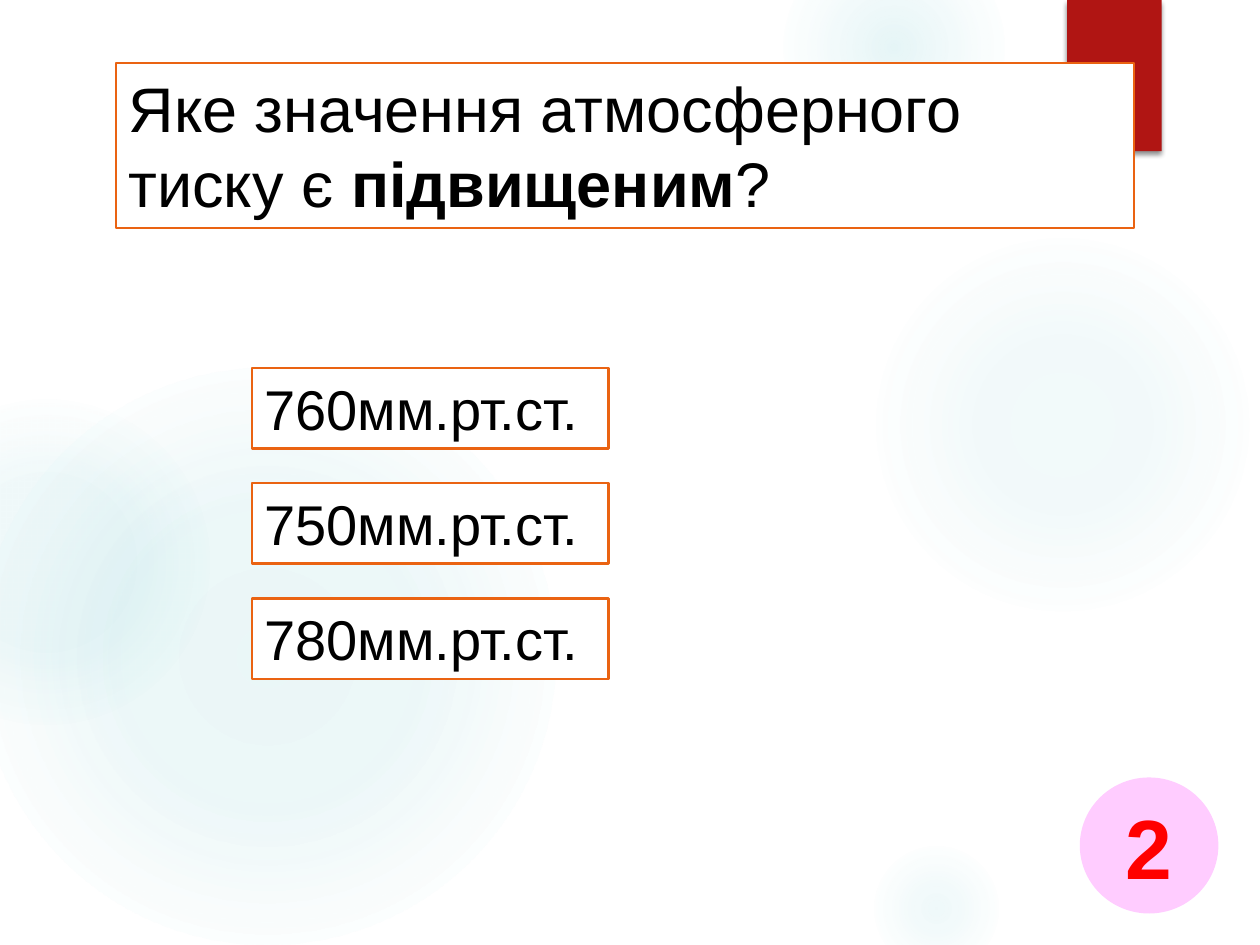
from lxml import etree
from pptx import Presentation
from pptx import util as u
from pptx.dml.color import RGBColor
from pptx.enum import shapes, text
from pptx.oxml import parse_xml
from pptx.oxml.ns import nsdecls

# Content
ASK = [("Яке значення атмосферного тиску є ", False),
       ("підвищеним", True), ("?", False)]
ANSWERS = ["760мм.рт.ст.", "750мм.рт.ст.", "780мм.рт.ст."]
NUMBER = "2"

# Glows: left, top, diameter, (position %, opacity %) stops
GLOWS = [
    (6.89, 1.83, 3.08, [(0, 7), (36, 6), (69, 0), (100, 0)]),
    (6.22, -0.5, 1.75, [(0, 14), (36, 7), (73, 0), (100, 0)]),
    (6.89, 6.67, 1.08, [(0, 9), (36, 5), (66, 0), (100, 0)]),
    (-0.17, 2.92, 4.58, [(0, 11), (36, 10), (75, 0), (100, 0)]),
    (-0.92, 3.17, 2.58, [(0, 8), (36, 8), (72, 0), (100, 0)]),
]
TEAL, RED, ORANGE, PINK = "4CB9C3", "B01513", "EA6312", "FFCCFF"
LEFT, TOP, STEP = 2, 2.92, 0.915  # answer column
RECT, OVAL = shapes.MSO_SHAPE.RECTANGLE, shapes.MSO_SHAPE.OVAL
ALIGN, ANCHOR = text.PP_ALIGN, text.MSO_ANCHOR


def rgb(code):
    return RGBColor.from_string(code)


def paint(shape, fill, line=None):
    shape.fill.solid()
    shape.fill.fore_color.rgb = rgb(fill)
    if line:
        shape.line.color.rgb = rgb(line)
        shape.line.width = u.Pt(1.5)
    else:
        shape.line.fill.background()


def add(kind, box, fill, line=None):
    shape = slide.shapes.add_shape(kind, *map(u.Inches, box))
    shape.shadow.inherit = False
    paint(shape, fill, line)
    return shape


def write(shape, runs, size, color="000000", align=ALIGN.LEFT,
          anchor=ANCHOR.TOP, fit=text.MSO_AUTO_SIZE.NONE):
    frame = shape.text_frame
    form = {"word_wrap": True, "auto_size": fit, "vertical_anchor": anchor,
            "margin_left": u.Inches(0.1), "margin_right": u.Inches(0.1),
            "margin_top": u.Inches(0.05), "margin_bottom": u.Inches(0.05)}
    for key, val in form.items():
        setattr(frame, key, val)
    para = frame.paragraphs[0]
    para.alignment = align
    for words, bold in runs:
        run = para.add_run()
        run.text = words
        for key, val in {"name": "Arial", "size": u.Pt(size), "bold": bold}.items():
            setattr(run.font, key, val)
        run.font.color.rgb = rgb(color)


def glow(shape, stops):
    marks = "".join(
        f'<a:gs pos="{pos * 1000}"><a:srgbClr val="{TEAL}">'
        f'<a:alpha val="{alpha * 1000}"/></a:srgbClr></a:gs>'
        for pos, alpha in stops)
    grad = parse_xml(
        f'<a:gradFill {nsdecls("a")} rotWithShape="1"><a:gsLst>{marks}</a:gsLst>'
        '<a:path path="circle"><a:fillToRect l="50000" t="50000" r="50000" '
        'b="50000"/></a:path></a:gradFill>')
    props = shape.fill._xPr
    props.replace(props.solidFill, grad)


def shade(shape):
    effects = shape._element.spPr.find("{*}effectLst")
    effects.append(etree.fromstring(
        f'<a:outerShdw {nsdecls("a")} blurRad="{u.Pt(3)}" dist="{u.Pt(2)}" '
        'dir="5400000" rotWithShape="0"><a:srgbClr val="000000">'
        '<a:alpha val="45000"/></a:srgbClr></a:outerShdw>'))


prs = Presentation()
prs.slide_width, prs.slide_height = u.Inches(10), u.Inches(7.5)
slide = prs.slides.add_slide(prs.slide_layouts[5])

# Backdrop
for left, top, size, stops in GLOWS:
    glow(add(OVAL, (left, top, size, size), TEAL), stops)
shade(add(RECT, (8.47, 0, 0.75, 1.2), RED))

# Question, brought in front of the backdrop
title = slide.shapes.title
slide.shapes._spTree.append(title._element)
title.left, title.top, title.width, title.height = map(
    u.Inches, (0.92, 0.5, 8.08, 1.31))
paint(title, "FFFFFF", ORANGE)
GROW = text.MSO_AUTO_SIZE.SHAPE_TO_FIT_TEXT
write(title, ASK, 36, fit=GROW)

# Slide number disc
disc = add(OVAL, (8.57, 6.17, 1.1, 1.08), PINK)
write(disc, [(NUMBER, True)], 48, "FF0000", ALIGN.CENTER, ANCHOR.MIDDLE)

# Answers
for row, answer in enumerate(ANSWERS):
    card = add(RECT, (LEFT, TOP + row * STEP, 2.83, 0.64), "FFFFFF", ORANGE)
    write(card, [(answer, False)], 32, fit=GROW)

prs.save("out.pptx")
